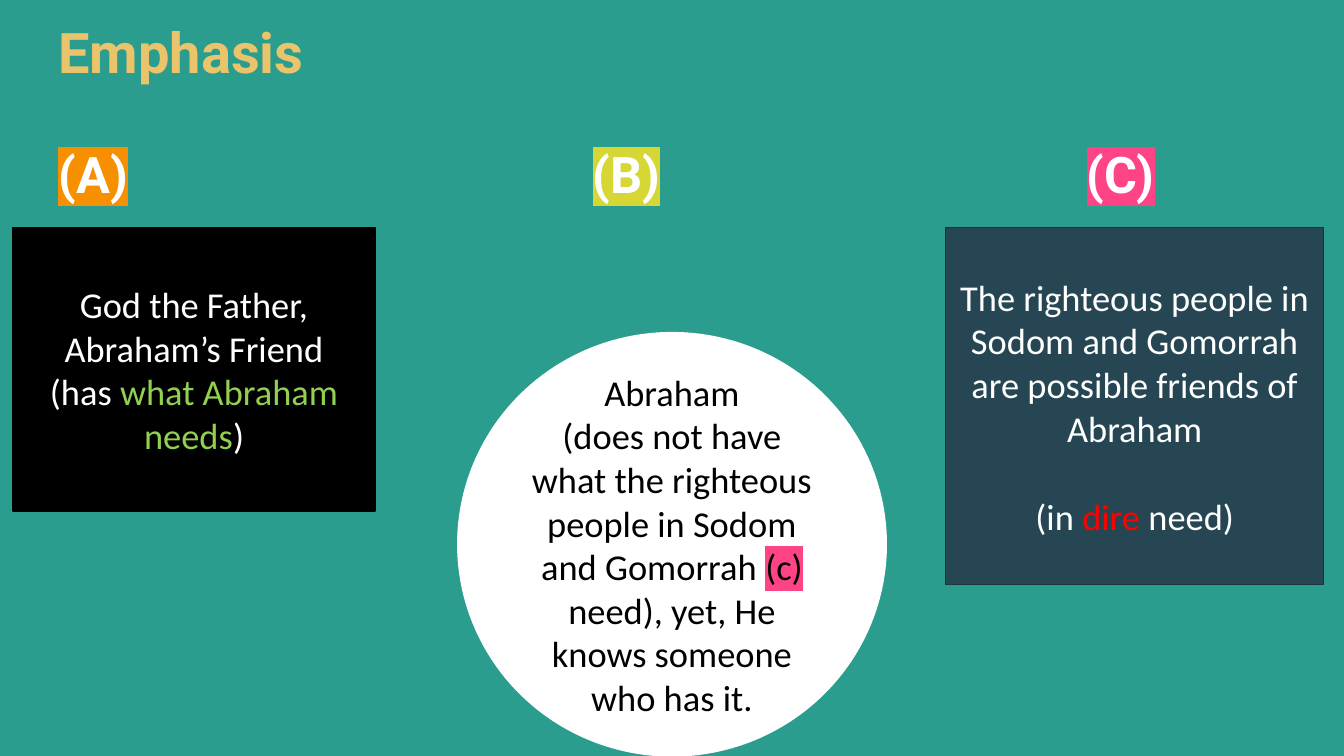
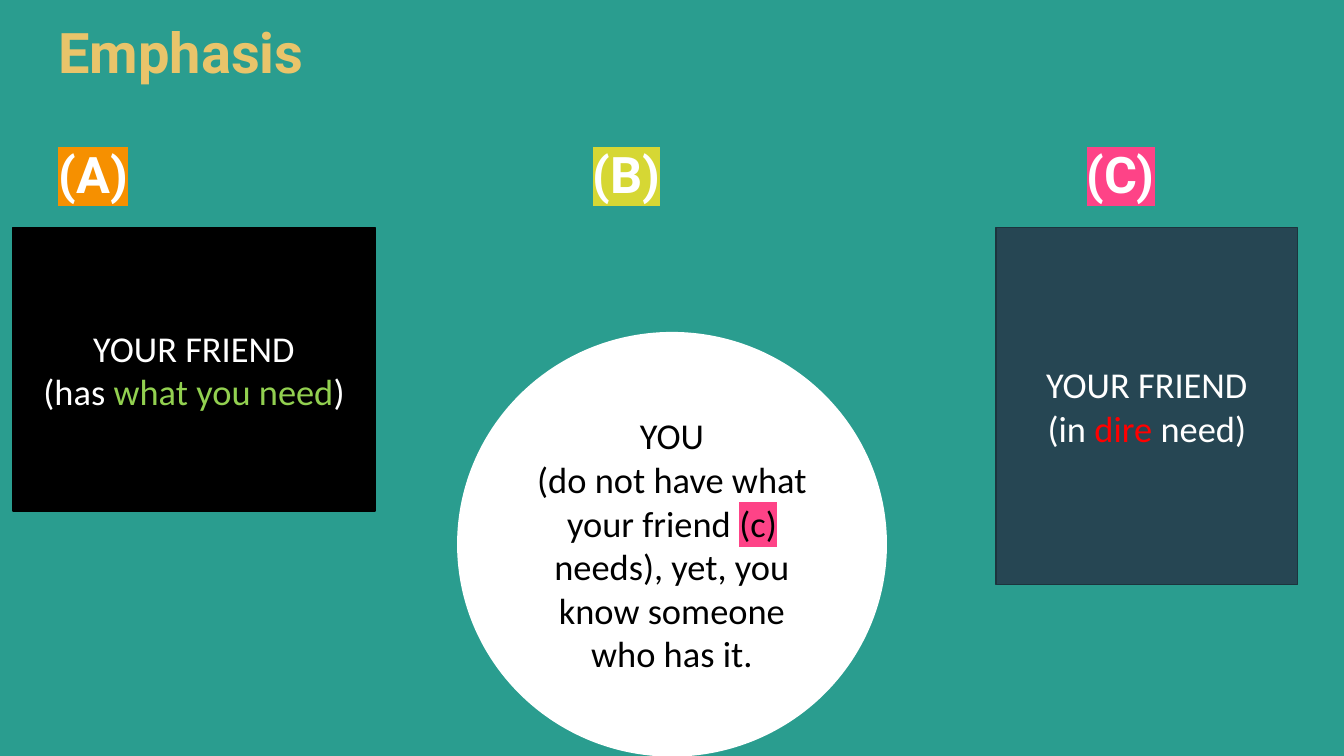
from dataclasses import dataclass

from lxml import etree
from pptx import Presentation
from pptx.dml.color import RGBColor
from pptx.enum.shapes import MSO_SHAPE
from pptx.enum.text import MSO_ANCHOR, MSO_AUTO_SIZE, PP_ALIGN
from pptx.oxml.ns import qn
from pptx.util import Inches, Pt


@dataclass(frozen=True)
class Theme:
    teal: str = "2A9D8F"
    sand: str = "E9C46A"
    orange: str = "F69000"
    lime: str = "D6D734"
    pink: str = "FE4387"
    green: str = "92D050"
    red: str = "FF0000"
    navy: str = "264653"
    navy_edge: str = "1C343D"
    black: str = "000000"
    white: str = "FFFFFF"
    heading_font: str = "Roboto"
    body_font: str = "Calibri"
    title_size: int = 40
    label_size: int = 36
    body_size: int = 26


theme = Theme()


def add_run(paragraph, text, font, size, color, bold=False, highlight=None):
    run = paragraph.add_run()
    run.text = text
    for name, value in {"name": font, "size": Pt(size), "bold": bold}.items():
        setattr(run.font, name, value)
    run.font.color.rgb = RGBColor.from_string(color)
    if highlight:
        # The highlight element belongs directly after the text fill
        mark = etree.Element(qn("a:highlight"))
        etree.SubElement(mark, qn("a:srgbClr"), val=highlight)
        run._r.get_or_add_rPr().find(qn("a:solidFill")).addnext(mark)


# Each panel is a list of paragraphs; each paragraph lists
# (text, colour or None for the panel's own, highlight)
need = [("(in ", None, None), ("dire", theme.red, None), (" need)", None, None)]
stories = [
    {
        "giver": [
            [("God the Father,", None, None)],
            [("Abraham’s Friend", None, None)],
            [("(has ", None, None), ("what Abraham needs", theme.green, None), (")", None, None)],
        ],
        "needy": [
            [("The righteous people in Sodom and Gomorrah are possible friends of Abraham", None, None)],
            need,
        ],
        "asker": [
            [("Abraham", None, None)],
            [
                ("(does not have what the righteous people in Sodom and Gomorrah ", None, None),
                ("(c)", None, theme.pink),
                (" need), yet, He knows someone who has it.", None, None),
            ],
        ],
        "needy_left": 9.38, "needy_width": 3.75, "need_gap": 31.7,
    },
    {
        "giver": [
            [("YOUR FRIEND", None, None)],
            [("(has ", None, None), ("what you need", theme.green, None), (")", None, None)],
        ],
        "needy": [[("YOUR FRIEND", None, None)], need],
        "asker": [
            [("YOU", None, None)],
            [
                ("(do not have what your friend ", None, None),
                ("(c)", None, theme.pink),
                (" needs), yet, you know someone who has it.", None, None),
            ],
        ],
        "needy_left": 9.88, "needy_width": 2.99, "need_gap": 0,
    },
]
# Column labels: text, highlight, distance from the left margin
labels = [("(A)", theme.orange, 0), ("(B)", theme.lime, 5.3), ("(C)", theme.pink, 10.2)]

presentation = Presentation()
presentation.slide_width, presentation.slide_height = Inches(13.33), Inches(7.5)

# Shared background and title place
background = presentation.slide_master.background.fill
background.solid()
background.fore_color.rgb = RGBColor.from_string(theme.teal)
title_only = presentation.slide_layouts[5]
title_place = {"left": 0.58, "top": 0.19, "width": 11.67, "height": 0.71}
for name, value in title_place.items():
    setattr(title_only.placeholders[0], name, Inches(value))

for story in stories:
    slide = presentation.slides.add_slide(title_only)

    # Title
    heading = slide.shapes.title.text_frame
    heading.auto_size = MSO_AUTO_SIZE.NONE
    heading.vertical_anchor = MSO_ANCHOR.MIDDLE
    heading.margin_left = 0
    heading_line = heading.paragraphs[0]
    heading_line.alignment = PP_ALIGN.LEFT
    heading_line.line_spacing = 0.9
    add_run(heading_line, "Emphasis", theme.heading_font, theme.title_size, theme.sand, bold=True)

    # Column labels on one line, spaced by tab stops
    label_frame = slide.shapes.add_textbox(
        Inches(0.58), Inches(1.49), Inches(12.29), Inches(0.6)).text_frame
    label_frame.word_wrap = True
    for side in ("left", "right", "top", "bottom"):
        setattr(label_frame, f"margin_{side}", 0)
    label_line = label_frame.paragraphs[0]
    label_line.line_spacing = 0.9
    tab_stops = etree.SubElement(label_line._p.get_or_add_pPr(), qn("a:tabLst"))
    for text, highlight, offset in labels:
        if offset:
            etree.SubElement(tab_stops, qn("a:tab"), pos=str(Inches(offset)), algn="l")
            add_run(label_line, "\t", theme.heading_font, theme.label_size, theme.white, bold=True)
        add_run(label_line, text, theme.heading_font, theme.label_size, theme.white,
                bold=True, highlight=highlight)

    # The three parties: one who has, one in need, one in between
    parties = [
        ("giver", MSO_SHAPE.RECTANGLE, (0.13, 2.26, 3.59, 2.81),
         theme.black, theme.black, theme.white, 0),
        ("needy", MSO_SHAPE.RECTANGLE, (story["needy_left"], 2.26, story["needy_width"], 3.54),
         theme.navy, theme.navy_edge, theme.white, story["need_gap"]),
        ("asker", MSO_SHAPE.OVAL, (4.54, 3.3, 4.25, 4.2),
         theme.white, theme.white, theme.black, 0),
    ]
    for party, outline, place, fill, edge, ink, gap in parties:
        panel = slide.shapes.add_shape(outline, *(Inches(length) for length in place))
        panel.shadow.inherit = False
        panel.fill.solid()
        panel.fill.fore_color.rgb = RGBColor.from_string(fill)
        panel.line.color.rgb = RGBColor.from_string(edge)
        panel.line.width = Pt(1)
        frame = panel.text_frame
        frame.word_wrap = True
        frame.vertical_anchor = MSO_ANCHOR.MIDDLE
        for index, parts in enumerate(story[party]):
            paragraph = frame.add_paragraph() if index else frame.paragraphs[0]
            paragraph.alignment = PP_ALIGN.CENTER
            if index and gap:
                paragraph.space_before = Pt(gap)
            for text, color, highlight in parts:
                add_run(paragraph, text, theme.body_font, theme.body_size,
                        color or ink, highlight=highlight)

presentation.save("out.pptx")
